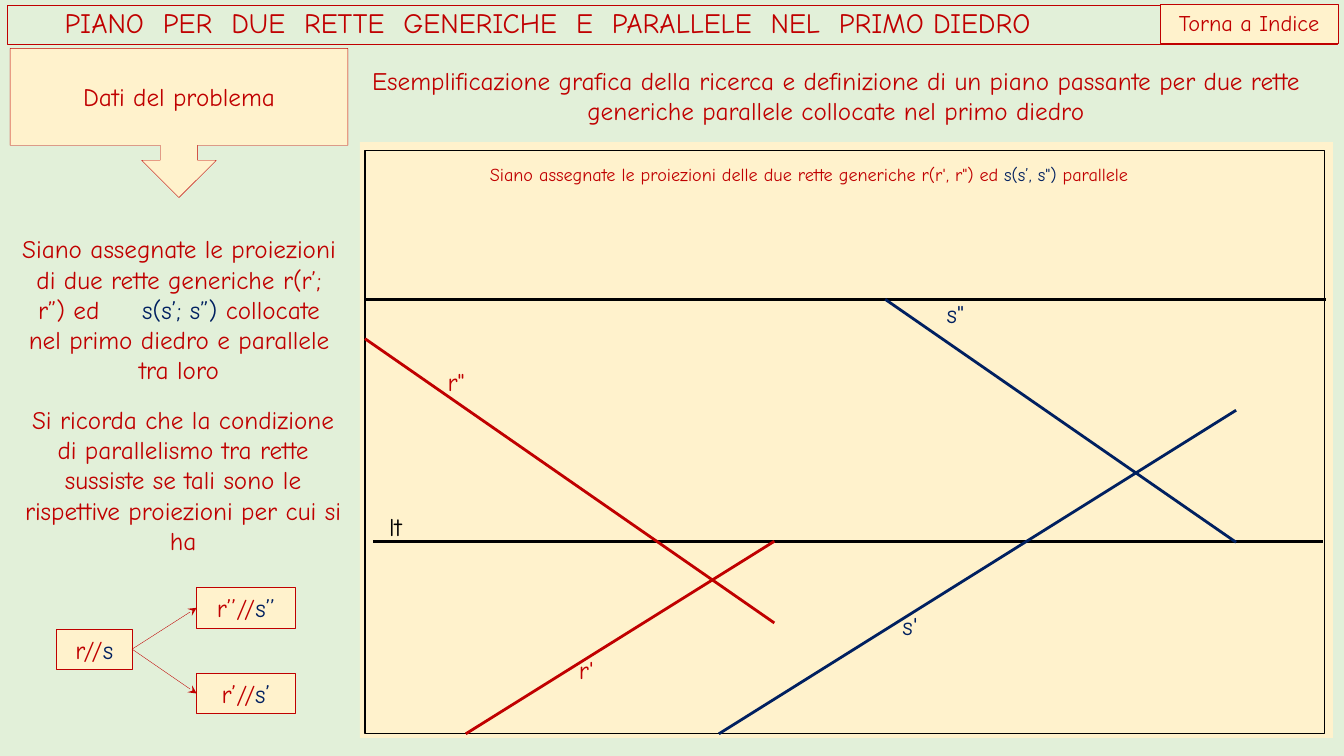
from dataclasses import dataclass
from typing import Optional

from lxml.etree import SubElement
from pptx import Presentation
from pptx.dml.color import RGBColor
from pptx.enum.shapes import MSO_CONNECTOR, MSO_SHAPE
from pptx.enum.text import MSO_ANCHOR, MSO_AUTO_SIZE, PP_ALIGN
from pptx.oxml.ns import qn
from pptx.util import Inches, Pt

# Grid of square cells, ten to the inch
COLUMNS, ROWS = 133.3, 75
CELL = Inches(0.1)
FONT = "Comic Neue"
COLOURS = {
    "page": "E2F0D9", "cream": "FFF2CC", "red": "C00000",
    "blue": "002060", "black": "000000",
}
THIN, HAIRLINE = 0.25, 0
RIGHT_SIDE, LEFT_SIDE = 3, 1

# Text frame formats
GROW = {"auto_size": MSO_AUTO_SIZE.SHAPE_TO_FIT_TEXT,
        "vertical_anchor": MSO_ANCHOR.TOP, "word_wrap": True}
MIDDLE = {"vertical_anchor": MSO_ANCHOR.MIDDLE, "word_wrap": True}
TITLE = {**MIDDLE, "margin_left": round(5.7 * CELL)}
LABEL = {**GROW, "word_wrap": False, "margin_left": 0, "margin_right": 0,
         "margin_top": 0, "margin_bottom": 0}
CENTRED = {"alignment": PP_ALIGN.CENTER}
LEFT = {"alignment": PP_ALIGN.LEFT}
TIGHT = {**LEFT, "line_spacing": 0.9}


@dataclass
class Words:
    text: str
    colour: str = "red"
    gap: float = 0  # extra width after each character, in points


@dataclass
class Box:
    left: float
    top: float
    width: float
    height: float
    words: tuple = ()
    size: float = 18
    fill: Optional[str] = "cream"
    outline: Optional[str] = None
    weight: float = THIN
    frame: Optional[dict] = None
    paragraph: Optional[dict] = None
    preset: Optional[MSO_SHAPE] = MSO_SHAPE.RECTANGLE  # None is a text box


@dataclass
class Line:
    x1: float
    y1: float
    x2: float
    y2: float
    colour: str
    weight: float = HAIRLINE


def cells(*lengths: float) -> list:
    return [round(length * CELL) for length in lengths]


def rgb(name: str) -> RGBColor:
    return RGBColor.from_string(COLOURS[name])


def apply(target, values: dict) -> None:
    for name, value in values.items():
        setattr(target, name, value)


def draw_box(shapes, box: Box):
    place = cells(box.left, box.top, box.width, box.height)
    if box.preset is None:
        shape = shapes.add_textbox(*place)
    else:
        shape = shapes.add_shape(box.preset, *place)
        shape.shadow.inherit = False
        if box.fill:
            shape.fill.solid()
            shape.fill.fore_color.rgb = rgb(box.fill)
        else:
            shape.fill.background()
        if box.outline:
            shape.line.color.rgb = rgb(box.outline)
            shape.line.width = Pt(box.weight)
        else:
            shape.line.fill.background()
    if box.words:
        apply(shape.text_frame, box.frame or GROW)
        paragraph = shape.text_frame.paragraphs[0]
        apply(paragraph, box.paragraph or CENTRED)
        for words in box.words:
            run = paragraph.add_run()
            run.text = words.text
            apply(run.font, {"name": FONT, "size": Pt(box.size)})
            run.font.color.rgb = rgb(words.colour)
            if words.gap:
                run.font._element.set("spc", str(round(words.gap * 100)))
    return shape


def draw_line(shapes, line: Line):
    connector = shapes.add_connector(
        MSO_CONNECTOR.STRAIGHT, *cells(line.x1, line.y1, line.x2, line.y2))
    connector.line.color.rgb = rgb(line.colour)
    connector.line.width = Pt(line.weight)
    SubElement(connector._element.spPr, qn("a:effectLst"))
    return connector


def draw_arrow(shapes, source, target) -> None:
    arrow = draw_line(shapes, Line(0, 0, 1, 1, "red", THIN))
    arrow.begin_connect(source, RIGHT_SIDE)
    arrow.end_connect(target, LEFT_SIDE)
    SubElement(arrow._element.spPr.find(qn("a:ln")), qn("a:tailEnd"), type="stealth")


def spaced(phrases: tuple, gap: float) -> tuple:
    """Phrases parted by one widened space."""
    runs = [Words(phrases[0])]
    for phrase in phrases[1:]:
        runs += [Words(" ", gap=gap), Words(phrase)]
    return tuple(runs)


def label(left: float, top: float, width: float, height: float,
          *words: Words, size: float = 18) -> Box:
    return Box(left, top, width, height, words, size, frame=LABEL, paragraph=LEFT)


def relation(left: float, top: float, width: float, r: str, s: str) -> Box:
    return Box(left, top, width, 4, (Words(r + "//"), Words(s, "blue")), outline="red")


TITLE_PHRASES = ("PIANO", "PER", "DUE", "RETTE", "GENERICHE", "E",
                 "PARALLELE", "NEL", "PRIMO DIEDRO")
HEADER = [
    Box(0.7, 0.5, 131.9, 3.9, spaced(TITLE_PHRASES, 6.8), 20, None, "red",
        frame=TITLE, paragraph=TIGHT),
    Box(1, 4.8, 33.5, 14.8, (Words("Dati del problema"),), outline="red",
        frame=MIDDLE, preset=MSO_SHAPE.DOWN_ARROW_CALLOUT),
    Box(115.1, 0.4, 17.6, 3.9, (Words("Torna a Indice"),), 16, outline="red"),
    Box(33.7, 6, 98.4, 7.1, (Words(
        "Esemplificazione grafica della ricerca e definizione di un piano passante "
        "per due rette generiche parallele collocate nel primo diedro"),), preset=None),
]
DRAWING_BOXES = [
    Box(35.7, 14.1, 96.5, 59.1),
    Box(36.2, 14.9, 95.2, 57.9, outline="black", weight=HAIRLINE),
    label(38.6, 50.7, 2.9, 4.2, Words("lt", "black")),
    label(48.6, 16.2, 70.4, 2.2,
          Words("Siano assegnate le proiezioni delle due rette generiche r(r', r\") ed "),
          Words("s(s’, s\")", "blue"), Words(" parallele"), size=13),
    label(44.4, 36.3, 2.3, 3, Words('r"')),
    label(57.4, 64.9, 2.2, 3, Words("r'")),
    label(93.9, 29.6, 2.3, 3, Words('s"', "blue")),
    label(89.5, 60.5, 2.2, 3, Words("s'", "blue")),
]
DRAWING_LINES = [
    Line(37, 53.7, 131.2, 53.7, "black"),
    Line(131.5, 29.7, 36.2, 29.7, "black"),
    Line(36.2, 33.6, 76.8, 61.8, "red"),
    Line(46.2, 72.8, 76.8, 53.7, "red"),
    Line(87.8, 29.7, 122.6, 53.8, "blue"),
    Line(71.3, 72.8, 122.6, 40.7, "blue"),
]
EXPLANATION = [
    Box(1, 22.7, 33.5, 16.2, (
        Words("Siano assegnate le proiezioni di due rette generiche r(r’; r”) ed"),
        Words(" ", gap=24.5), Words("s(s’; s”) ", "blue"),
        Words("collocate nel primo diedro e parallele tra loro")), preset=None),
    Box(1.4, 39.6, 33.5, 16.2, (Words(
        "Si ricorda che la condizione di parallelismo tra rette sussiste se tali "
        "sono le rispettive proiezioni per cui si ha"),), preset=None),
]
CONDITION = relation(5.6, 62.4, 7.5, "r", "s")
CONSEQUENCES = [relation(19.5, 58.3, 9.8, "r’’", "s’’"),
                relation(19.5, 66.8, 9.8, "r’", "s’")]


def main() -> None:
    deck = Presentation()
    deck.slide_width, deck.slide_height = cells(COLUMNS, ROWS)
    slide = deck.slides.add_slide(deck.slide_layouts[6])
    slide.background.fill.solid()
    slide.background.fill.fore_color.rgb = rgb("page")

    # Title bar and headings
    for box in HEADER:
        draw_box(slide.shapes, box)

    # Projections of the two lines
    drawing = slide.shapes.add_group_shape().shapes
    for box in DRAWING_BOXES:
        draw_box(drawing, box)
    for line in DRAWING_LINES:
        draw_line(drawing, line)

    # Explanation and parallelism condition
    for box in EXPLANATION:
        draw_box(slide.shapes, box)
    condition = draw_box(slide.shapes, CONDITION)
    consequences = [draw_box(slide.shapes, box) for box in CONSEQUENCES]
    for consequence in consequences:
        draw_arrow(slide.shapes, condition, consequence)

    deck.save("out.pptx")


if __name__ == "__main__":
    main()
